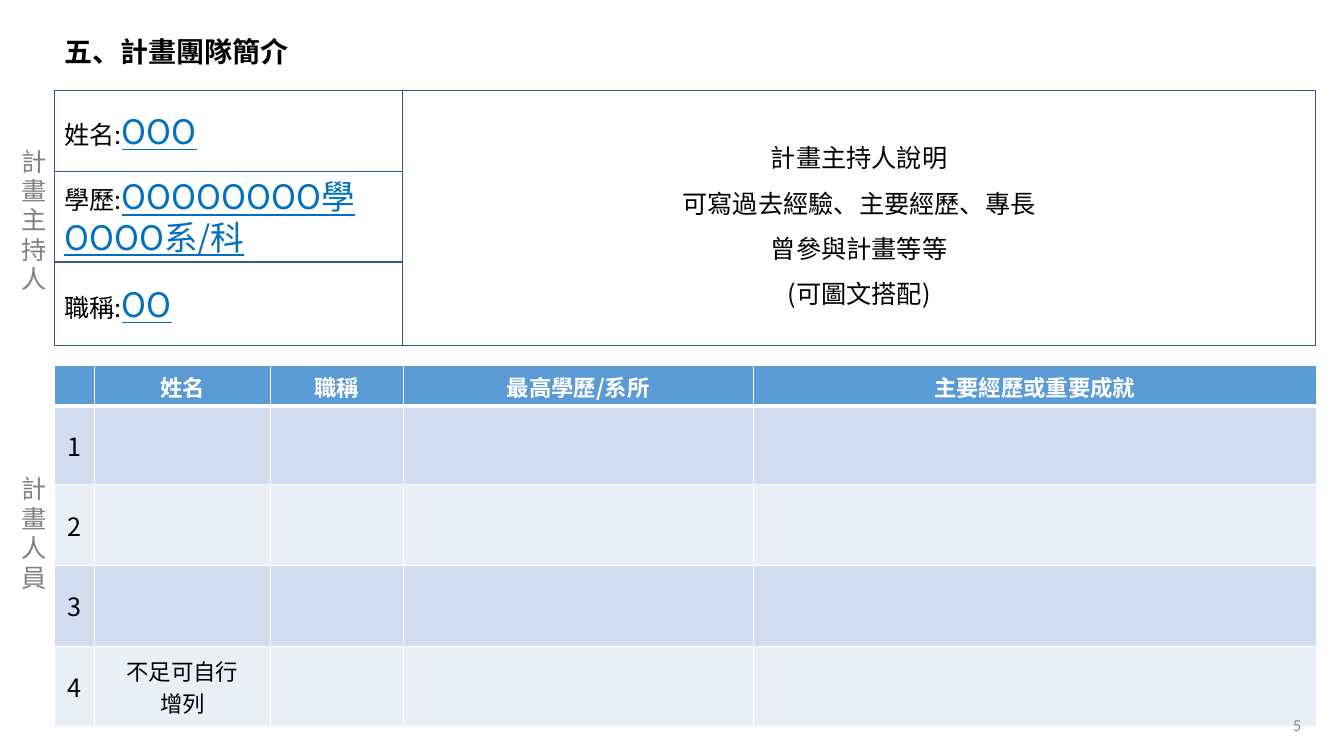
from lxml.etree import SubElement
from pptx import Presentation
from pptx.dml.color import RGBColor
from pptx.enum.shapes import MSO_SHAPE as Preset
from pptx.enum.text import MSO_ANCHOR as Anchor, MSO_AUTO_SIZE as AutoSize, PP_ALIGN as Align
from pptx.oxml.ns import qn
from pptx.util import Inches, Pt

COLORS = {
    "text": "000000", "entry": "0070C0", "label": "808080", "number": "8C8C8C",
    "frame": "325491", "header": "5B9BD5", "odd": "D2DEEF", "even": "EAEFF7",
    "white": "FFFFFF",
}
CJK = "Noto Sans CJK SC"
ENTRY = {"size": 24, "color": "entry", "underline": True}


class TeamSlide:
    """Holds the style and the slide being filled."""

    def __init__(self, deck):
        self.slide = deck.slides.add_slide(deck.slide_layouts[5])

    def color(self, name):
        return RGBColor.from_string(COLORS[name])

    def set_font(self, font, size=18, color="text", bold=False, underline=False, name=CJK, spacing=0):
        font.size, font.bold, font.underline, font.name = Pt(size), bold, underline, name
        font.color.rgb = self.color(color)
        SubElement(font._element, qn("a:ea")).set("typeface", name)
        if spacing:
            font._element.set("spc", str(spacing * 100))

    def add_text(self, frame, paragraphs, align=Align.LEFT, line_spacing=1.0, **style):
        """Each paragraph is a string or a list of (text, style) pairs."""
        for i, content in enumerate(paragraphs):
            para = frame.paragraphs[0] if i == 0 else frame.add_paragraph()
            para.alignment, para.line_spacing = align, line_spacing
            if isinstance(content, str):
                para.add_run().text = content
                self.set_font(para.font, **style)
                continue
            for text, run_style in content:
                run = para.add_run()
                run.text = text
                self.set_font(run.font, **run_style)

    def place(self, shape, left, top, width, height):
        shape.left, shape.top = Inches(left), Inches(top)
        shape.width, shape.height = Inches(width), Inches(height)

    def title(self, text, *box):
        heading = self.slide.shapes.title
        self.place(heading, *box)
        frame = heading.text_frame
        frame.word_wrap, frame.auto_size = False, AutoSize.SHAPE_TO_FIT_TEXT
        frame.vertical_anchor = Anchor.TOP
        self.add_text(frame, [text], size=20, bold=True)

    def panel(self, paragraphs, *box, **style):
        panel = self.slide.shapes.add_shape(Preset.RECTANGLE, *map(Inches, box))
        panel.shadow.inherit = False
        panel.fill.background()
        panel.line.color.rgb, panel.line.width = self.color("frame"), Pt(1)
        panel.text_frame.word_wrap = True
        panel.text_frame.vertical_anchor = Anchor.MIDDLE
        self.add_text(panel.text_frame, paragraphs, **style)

    def side_label(self, text, *box):
        frame = self.slide.shapes.add_textbox(*map(Inches, box)).text_frame
        frame.word_wrap, frame.auto_size = False, AutoSize.SHAPE_TO_FIT_TEXT
        frame._txBody.bodyPr.set("vert", "eaVert")
        self.add_text(frame, [text], color="label", spacing=3)

    def page_number(self, text, *box):
        frame = self.slide.shapes.add_textbox(*map(Inches, box)).text_frame
        frame.word_wrap, frame.vertical_anchor = True, Anchor.MIDDLE
        self.add_text(frame, [text], Align.CENTER, size=12, color="number", name="Calibri")

    def border(self, cell, side, points):
        line = SubElement(cell._tc.get_or_add_tcPr(), qn(f"a:ln{side}"), w=str(Pt(points)))
        fill = SubElement(line, qn("a:solidFill"))
        SubElement(fill, qn("a:srgbClr"), val=COLORS["white"])

    def table(self, rows, widths, heights, left, top):
        table = self.slide.shapes.add_table(
            len(rows), len(widths), Inches(left), Inches(top),
            Inches(sum(widths)), Inches(sum(heights))).table
        for column, width in zip(table.columns, widths):
            column.width = Inches(width)
        for r, (row, height) in enumerate(zip(rows, heights)):
            table.rows[r].height = Inches(height)
            for c, text in enumerate(row):
                cell = table.cell(r, c)
                thick = {0: "B", 1: "T"}.get(r)
                for side in "LRTB":
                    self.border(cell, side, 3 if side == thick else 1)
                cell.fill.solid()
                cell.fill.fore_color.rgb = self.color("header" if r == 0 else "odd" if r % 2 else "even")
                cell.vertical_anchor = Anchor.MIDDLE
                if r == 0:
                    style = {"size": 16, "color": "white", "bold": True}
                else:
                    style = {"size": 18 if c == 0 else 16}
                if text:
                    self.add_text(cell.text_frame, text.split("\n"), Align.CENTER, **style)
                else:
                    cell.text_frame.paragraphs[0].font.size = Pt(style["size"])


def main():
    deck = Presentation()
    deck.slide_width, deck.slide_height = Inches(13.33), Inches(7.5)
    team = TeamSlide(deck)
    left, top = 0.54, 0.9

    team.title("五、計畫團隊簡介", left, 0.29, 2.45, 0.44)

    # Project leader: description and personal data
    team.panel(["計畫主持人說明", "可寫過去經驗、主要經歷、專長", "曾參與計畫等等", "(可圖文搭配)"],
               3.99, top, 9.06, 2.53, align=Align.CENTER, line_spacing=1.5)
    leader_data = [
        ("姓名:", ["OOO"], 0.8),
        ("學歷:", ["OOOOOOOO學", "OOOO系/科"], 0.9),
        ("職稱:", ["OO"], 0.83),
    ]
    for caption, (first, *others), height in leader_data:
        lines = [[(caption, {}), (first, ENTRY)]] + [[(other, ENTRY)] for other in others]
        team.panel(lines, left, top, 3.45, height)
        top += height

    # Project members
    members = [["", "姓名", "職稱", "最高學歷/系所", "主要經歷或重要成就"]]
    members += [[str(n), "", "", "", ""] for n in range(1, 5)]
    members[-1][1] = "不足可自行\n增列"
    team.table(members, [0.4, 1.74, 1.32, 3.47, 5.59], [0.4, 0.78, 0.8, 0.8, 0.8], left, 3.63)

    # Vertical section labels and page number
    team.side_label("計畫主持人", 0.03, 1.38, 0.5, 1.57)
    team.side_label("計畫人員", 0.03, 4.63, 0.5, 1.28)
    team.page_number("5", 12, 6.99, 1.73, 0.4)

    deck.save("out.pptx")


if __name__ == "__main__":
    main()
